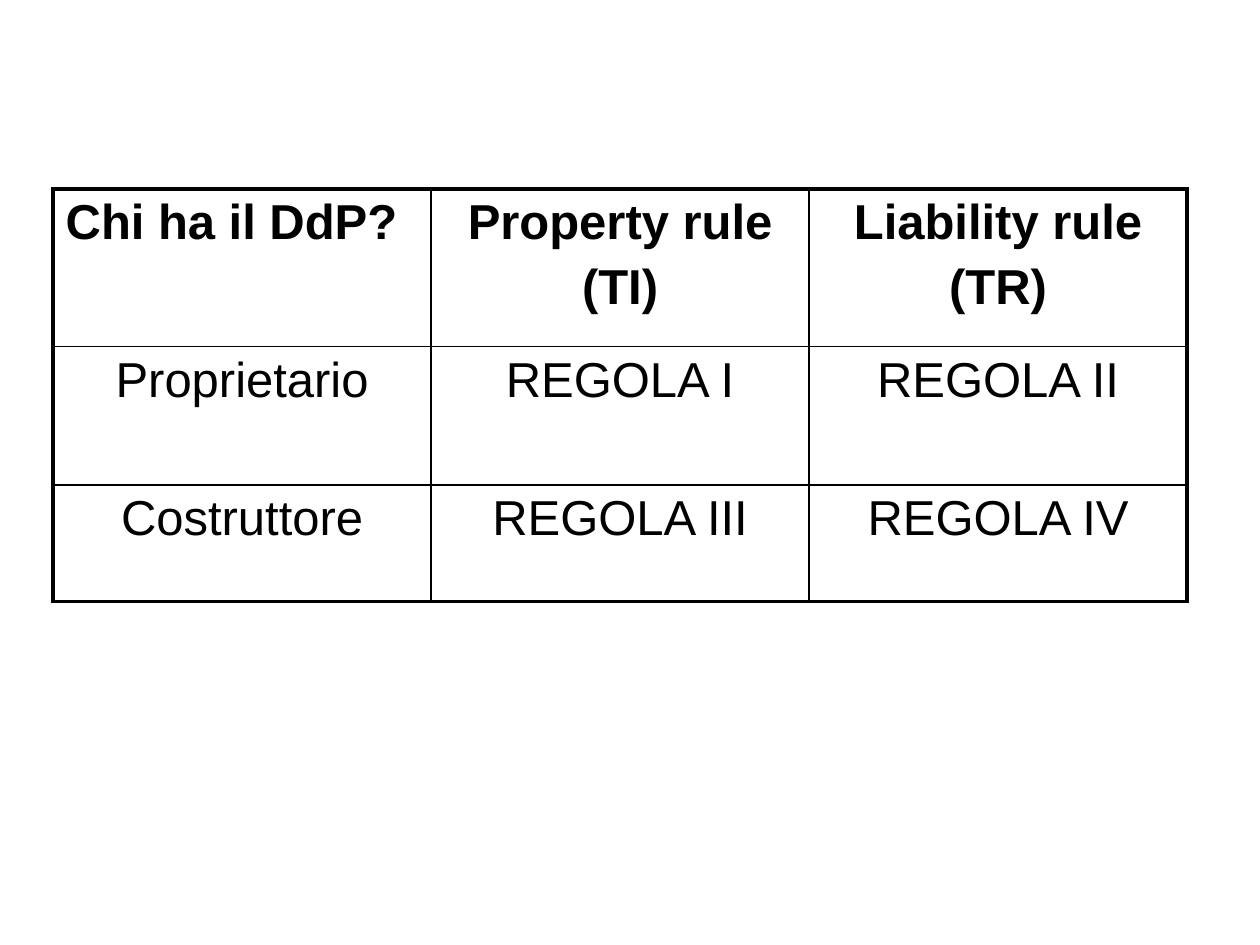
from dataclasses import dataclass

from lxml.etree import SubElement
from pptx import Presentation
from pptx.dml.color import RGBColor
from pptx.enum.text import PP_ALIGN as Align
from pptx.oxml.ns import qn
from pptx.table import _Cell as Cell
from pptx.util import Cm, Pt

BLACK = RGBColor(0x00, 0x00, 0x00)
FONT = "Arial"
OUTER, INNER = Pt(2.25), Pt(1)
COLUMN_WIDTH = Cm(7.62)


@dataclass(frozen=True)
class Row:
    height: Cm
    texts: tuple[str, ...]
    bold: bool = False


RULES = (
    Row(Cm(3.18), ("Chi ha il DdP?", "Property rule\n(TI)", "Liability rule\n(TR)"), bold=True),
    Row(Cm(2.79), ("Proprietario", "REGOLA I", "REGOLA II")),
    Row(Cm(2.34), ("Costruttore", "REGOLA III", "REGOLA IV")),
)


def write(cell: Cell, text: str, *, bold: bool = False, align: Align = Align.CENTER,
          size: Pt = Pt(28), color: RGBColor = BLACK) -> None:
    """Fill the cell with one paragraph per line of text."""
    cell.text = text
    for paragraph in cell.text_frame.paragraphs:
        paragraph.alignment = align
        paragraph.space_before = Pt(5.6)
        for run in paragraph.runs:
            run.font.name = FONT
            run.font.size = size
            run.font.bold = bold
            run.font.color.rgb = color


def set_borders(cell: Cell, widths: dict[str, int]) -> None:
    """Draw a solid border per side; borders must precede the cell fill."""
    properties = cell._tc.get_or_add_tcPr()
    for side, width in widths.items():
        border = SubElement(properties, qn(f"a:ln{side}"), w=str(int(width)))
        fill = SubElement(border, qn("a:solidFill"))
        SubElement(fill, qn("a:srgbClr"), val=str(BLACK))


def main() -> None:
    presentation = Presentation()
    presentation.slide_width, presentation.slide_height = Cm(25.4), Cm(19.05)
    slide = presentation.slides.add_slide(presentation.slide_layouts[6])

    row_count, column_count = len(RULES), len(RULES[0].texts)
    table = slide.shapes.add_table(
        row_count, column_count, Cm(1.07), Cm(3.81),
        COLUMN_WIDTH * column_count, sum(row.height for row in RULES),
    ).table
    table.first_row = table.horz_banding = False
    for column in table.columns:
        column.width = COLUMN_WIDTH

    for r, row in enumerate(RULES):
        table.rows[r].height = row.height
        for c, text in enumerate(row.texts):
            cell = table.cell(r, c)
            is_corner = r == c == 0
            write(cell, text, bold=row.bold, align=Align.LEFT if is_corner else Align.CENTER)
            set_borders(cell, {
                "L": OUTER if c == 0 else INNER,
                "R": OUTER if c == column_count - 1 else INNER,
                "T": OUTER if r == 0 else INNER,
                "B": OUTER if r == row_count - 1 else INNER,
            })
            cell.fill.background()

    presentation.save("out.pptx")


if __name__ == "__main__":
    main()
